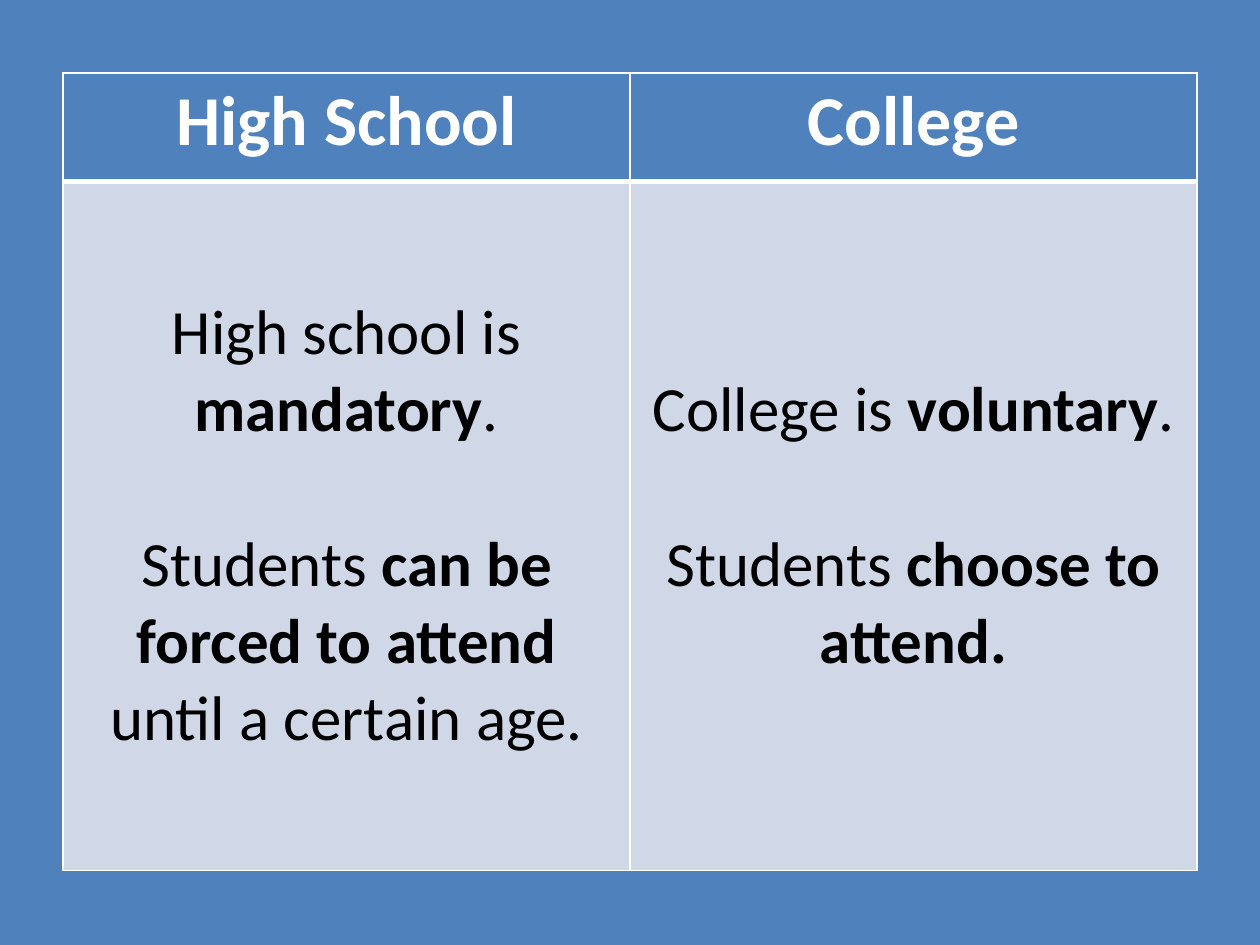
"""Build a slide with a table that compares high school and college."""
from dataclasses import dataclass

from lxml import etree
from pptx import Presentation
from pptx import util as u
from pptx.dml import color
from pptx.enum import text as tx
from pptx.oxml import ns

HUES = {"blue": "4F81BD", "pale": "D0D8E8", "white": "FFFFFF", "black": "000000"}
Run = tuple[str, bool]


@dataclass
class Topic:
    head: str
    body: list[list[Run]]


TOPICS = [
    Topic("High School", [
        [("High school is ", False), ("mandatory", True), (".", False)],
        [("Students ", False), ("can be forced to attend ", True),
         ("until a certain age.", False)],
    ]),
    Topic("College", [
        [("College is ", False), ("voluntary", True), (".", False)],
        [("Students ", False), ("choose to attend.", True)],
    ]),
]


def rgb(name: str) -> color.RGBColor:
    return color.RGBColor.from_string(HUES[name])


def write(frame, paras: list[list[Run]], *, size: int, hue: str, gap: int = 0) -> None:
    for i, runs in enumerate(paras):
        para = frame.add_paragraph() if i else frame.paragraphs[0]
        para.alignment = tx.PP_ALIGN.CENTER
        if i:
            para.space_before = u.Pt(gap)
        for words, bold in runs:
            run = para.add_run()
            run.text = words
            font = run.font
            font.name, font.size, font.bold = "Calibri", u.Pt(size), bold
            font.color.rgb = rgb(hue)


def edge(cell, top: int = 1, base: int = 1) -> None:
    props = cell._tc.get_or_add_tcPr()
    for i, (side, width) in enumerate(zip("LRTB", (1, 1, top, base))):
        line = etree.Element(ns.qn(f"a:ln{side}"), w=str(u.Pt(width)))
        fill = etree.SubElement(line, ns.qn("a:solidFill"))
        etree.SubElement(fill, ns.qn("a:srgbClr"), val=HUES["white"])
        props.insert(i, line)


def paint(cell, hue: str) -> None:
    cell.fill.solid()
    cell.fill.fore_color.rgb = rgb(hue)


def main() -> None:
    deck = Presentation()
    deck.slide_width, deck.slide_height = u.Inches(10), u.Inches(7.5)
    slide = deck.slides.add_slide(deck.slide_layouts[6])
    slide.background.fill.solid()
    slide.background.fill.fore_color.rgb = rgb("blue")

    grid = slide.shapes.add_table(
        2, len(TOPICS), u.Inches(0.5), u.Inches(0.58), u.Inches(9), u.Inches(6.33)
    ).table
    for row, tall in zip(grid.rows, (0.86, 5.47)):
        row.height = u.Inches(tall)

    for col, topic in enumerate(TOPICS):
        head, body = grid.cell(0, col), grid.cell(1, col)
        paint(head, "blue")
        edge(head, base=3)
        write(head.text_frame, [[(topic.head, True)]], size=40, hue="white")
        paint(body, "pale")
        edge(body, top=3)
        body.vertical_anchor = tx.MSO_ANCHOR.MIDDLE
        write(body.text_frame, topic.body, size=36, hue="black", gap=44)

    deck.save("out.pptx")


if __name__ == "__main__":
    main()
